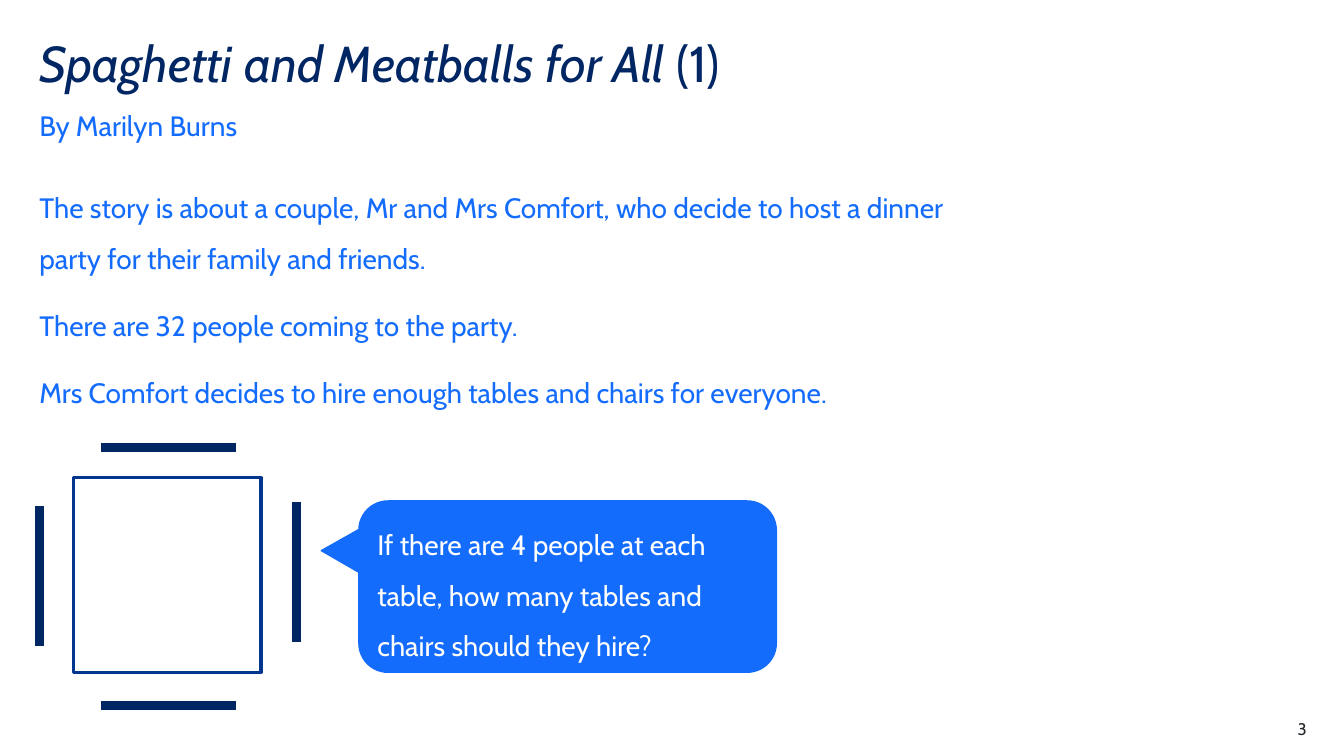
"""Build the Spaghetti and Meatballs for All story slide."""
from lxml import etree
from pptx import Presentation
from pptx.dml.color import RGBColor
from pptx.enum.shapes import MSO_CONNECTOR, MSO_SHAPE
from pptx.enum.text import MSO_ANCHOR, MSO_AUTO_SIZE, PP_ALIGN
from pptx.oxml.ns import qn
from pptx.util import Inches, Pt

LEFT, RIGHT = PP_ALIGN.LEFT, PP_ALIGN.RIGHT
TOP, MIDDLE, BOTTOM = MSO_ANCHOR.TOP, MSO_ANCHOR.MIDDLE, MSO_ANCHOR.BOTTOM
NO_FIT = MSO_AUTO_SIZE.NONE
STRAIGHT = MSO_CONNECTOR.STRAIGHT
RECT, CALLOUT = MSO_SHAPE.RECTANGLE, MSO_SHAPE.ROUNDED_RECTANGULAR_CALLOUT
NAVY, EDGE, BLUE, WHITE, INK = "002664", "00368D", "146CFD", "FFFFFF", "22272B"


def rgb(value):
    return RGBColor.from_string(value)


def write(sp, paragraphs, size, color, anchor=TOP, inset=0, **formats):
    tf = sp.text_frame
    frame = {"word_wrap": True, "auto_size": NO_FIT, "vertical_anchor": anchor}
    if inset is not None:
        for side in ("left", "top", "right", "bottom"):
            frame[f"margin_{side}"] = Inches(inset)
    for name, value in frame.items():
        setattr(tf, name, value)
    for i, runs in enumerate(paragraphs):
        p = tf.add_paragraph() if i else tf.paragraphs[0]
        layout = {"alignment": LEFT, "space_before": Pt(0), **formats}
        for name, value in layout.items():
            setattr(p, name, value)
        if sp.is_placeholder:
            pPr = p._p.get_or_add_pPr()
            pPr.set("marL", "0")
            pPr.set("indent", "0")
            etree.SubElement(pPr, qn("a:buNone"))
        for text, italic in runs:
            r = p.add_run()
            r.text = text
            font = {"name": "Cabin", "size": Pt(size), "bold": False, "italic": italic}
            for name, value in font.items():
                setattr(r.font, name, value)
            r.font.color.rgb = rgb(color)


prs = Presentation()
prs.slide_width, prs.slide_height = Inches(13.33), Inches(7.5)
s = prs.slides.add_slide(prs.slide_layouts[3])

title, byline, story = s.placeholders
boxes = [
    (title, 0.39, 11.02, 0.6),
    (byline, 1.07, 11.02, 0.34),
    (story, 1.63, 9.39, 2.43),
]
for sp, top, width, height in boxes:
    sp.left, sp.top = Inches(0.39), Inches(top)
    sp.width, sp.height = Inches(width), Inches(height)

write(title, [[("Spaghetti and Meatballs for All ", True), ("(1)", False)]],
      36, NAVY, line_spacing=0.9)
body = {"line_spacing": 1.5, "space_after": Pt(12)}
write(byline, [[("By Marilyn Burns", False)]], 20, BLUE, BOTTOM, **body)
sentences = [
    "The story is about a couple, Mr and Mrs Comfort, who decide to host a dinner "
    "party for their family and friends.",
    "There are 32 people coming to the party.",
    "Mrs Comfort decides to hire enough tables and chairs for everyone.",
]
write(story, [[(text, False)] for text in sentences], 20, BLUE, BOTTOM, **body)

seating = s.shapes.add_group_shape()
table = seating.shapes.add_shape(RECT, Inches(0.73), Inches(4.74), Inches(1.86), Inches(1.93))
table.shadow.inherit = False
table.fill.background()
table.line.color.rgb = rgb(EDGE)
table.line.width = Pt(2.25)

chairs = [
    (1, 4.44, 2.34, 4.44),
    (1, 7, 2.34, 7),
    (0.39, 5.02, 0.39, 6.41),
    (2.94, 4.98, 2.94, 6.37),
]
for ends in chairs:
    chair = seating.shapes.add_connector(STRAIGHT, *map(Inches, ends))
    chair.line.color.rgb = rgb(NAVY)
    chair.line.width = Pt(6)
    etree.SubElement(chair._element.spPr, qn("a:effectLst"))

question = s.shapes.add_shape(CALLOUT, Inches(3.56), Inches(4.97), Inches(4.14), Inches(1.7))
question.shadow.inherit = False
for i, value in enumerate((-0.59, -0.21, 0.17)):
    question.adjustments[i] = value
question.fill.solid()
question.fill.fore_color.rgb = rgb(BLUE)
question.line.color.rgb = rgb(BLUE)
question.line.width = Pt(1)
write(question, [[("If there are 4 people at each table, how many tables and "
                   "chairs should they hire?", False)]],
      20, WHITE, MIDDLE, None, line_spacing=1.5)

number = s.shapes.add_textbox(Inches(12.17), Inches(7.13), Inches(0.79), Inches(0.2))
write(number, [[("3", False)]], 12, INK, alignment=RIGHT)

prs.save("out.pptx")
